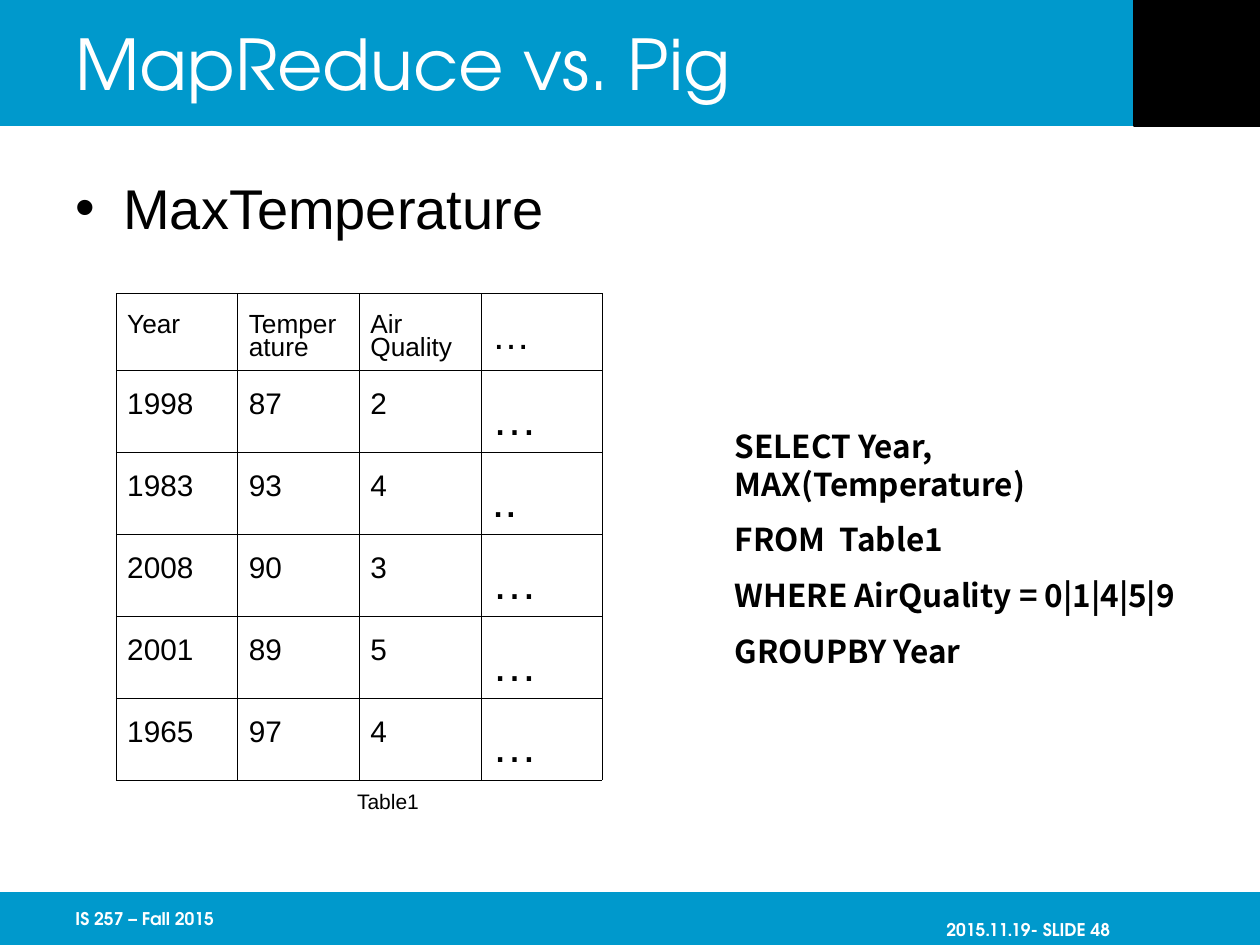
from lxml.etree import SubElement
from pptx import Presentation
from pptx.dml.color import RGBColor
from pptx.enum.shapes import MSO_SHAPE
from pptx.enum.text import MSO_ANCHOR as Anchor, PP_ALIGN as Align
from pptx.oxml.ns import qn
from pptx.util import Inches, Pt

BLUE = RGBColor(0x00, 0x99, 0xCC)
BLACK = RGBColor(0, 0, 0)
WHITE = RGBColor(0xFF, 0xFF, 0xFF)
DISPLAY, BODY, QUERY = "TeX Gyre Adventor", "Arial", "Noto Sans CJK SC"

TITLE = "MapReduce vs. Pig"
TOPIC = "MaxTemperature"
READINGS = [
    ("Year", "Temperature", "Air Quality", "…"),
    ("1998", "87", "2", "…"),
    ("1983", "93", "4", ".."),
    ("2008", "90", "3", "…"),
    ("2001", "89", "5", "…"),
    ("1965", "97", "4", "…"),
]
CAPTION = "Table1"
SQL = [
    "SELECT Year, MAX(Temperature)",
    "FROM  Table1",
    "WHERE AirQuality = 0|1|4|5|9",
    "GROUPBY Year",
]
COURSE = "IS 257 – Fall 2015"
PAGE = "2015.11.19- SLIDE 48"

WIDTH, HEIGHT = 10, 7.5
BAND, FOOTER, MARGIN = 1, 0.42, 0.5
FOOTER_TOP = HEIGHT - FOOTER
TABLE_LEFT, TABLE_TOP, TABLE_SIZE = 0.92, 2.33, 3.86
HEADER_ROW = 0.61
CELL_STYLES = {
    ("header", "value"): (15, 0.18),
    ("header", "more"): (22, 0.24),
    ("data", "value"): (17, 0.19),
    ("data", "more"): (26, 0.27),
}
INNER_LINE, OUTER_LINE = 0.06, 0.11

deck = Presentation()
deck.slide_width, deck.slide_height = Inches(WIDTH), Inches(HEIGHT)
slide = deck.slides.add_slide(deck.slide_layouts[6])


def set_insets(target, insets):
    (target.margin_left, target.margin_top,
     target.margin_right, target.margin_bottom) = map(Inches, insets)


def style(paragraph, size, face, color, bold=False):
    for run in paragraph.runs:
        font = run.font
        font.size, font.name, font.bold = Pt(size), face, bold
        font.color.rgb = color


def add_band(left, top, width, height, color):
    band = slide.shapes.add_shape(
        MSO_SHAPE.RECTANGLE, *map(Inches, (left, top, width, height)))
    band.shadow.inherit = False
    band.fill.solid()
    band.fill.fore_color.rgb = color
    band.line.fill.background()
    return band


def add_text(lines, place, size, face, color=BLACK, bold=False, align=Align.LEFT,
             anchor=Anchor.TOP, insets=(0.1, 0.05, 0.1, 0.05), gap=0):
    frame = slide.shapes.add_textbox(*map(Inches, place)).text_frame
    frame.word_wrap = True
    frame.vertical_anchor = anchor
    set_insets(frame, insets)
    frame.text = "\n".join(lines)
    for index, paragraph in enumerate(frame.paragraphs):
        paragraph.alignment = align
        if index:
            paragraph.space_before = Pt(gap)
        style(paragraph, size, face, color, bold)
    return frame


def add_border(cell, side, width):
    line = SubElement(cell._tc.get_or_add_tcPr(), qn(f"a:{side}"), w=str(int(Pt(width))))
    fill = SubElement(line, qn("a:solidFill"))
    SubElement(fill, qn("a:srgbClr"), val=str(BLACK))


def add_readings():
    rows, cols = len(READINGS), len(READINGS[0])
    table = slide.shapes.add_table(
        rows, cols, *map(Inches, (TABLE_LEFT, TABLE_TOP, TABLE_SIZE, TABLE_SIZE))).table
    table.first_row = table.horz_banding = False
    for column in table.columns:
        column.width = Inches(TABLE_SIZE / cols)
    for r, reading in enumerate(READINGS):
        table.rows[r].height = Inches(
            (TABLE_SIZE - HEADER_ROW) / (rows - 1) if r else HEADER_ROW)
        for c, value in enumerate(reading):
            size, top = CELL_STYLES["data" if r else "header",
                                    "more" if c == cols - 1 else "value"]
            cell = table.cell(r, c)
            set_insets(cell, (0.09, top, 0.09, 0.05))
            cell.text = value
            paragraph = cell.text_frame.paragraphs[0]
            paragraph.line_spacing = 0.76
            style(paragraph, size, BODY, BLACK)
            edges = {"lnL": c == 0, "lnR": c == cols - 1,
                     "lnT": r == 0, "lnB": r == rows - 1}
            for side, outer in edges.items():
                add_border(cell, side, OUTER_LINE if outer else INNER_LINE)
            cell.fill.background()


add_band(0, 0, WIDTH, BAND, BLUE)
add_band(0, FOOTER_TOP, WIDTH, FOOTER, BLUE)
add_text([PAGE], (7.42, FOOTER_TOP, 2.08, FOOTER), 10, DISPLAY, WHITE, True,
         Align.RIGHT, Anchor.MIDDLE, (0, 0.18, 0.69, 0))
corner = add_band(WIDTH - BAND, 0, BAND, BAND, BLACK)
corner.line.color.rgb = BLACK
corner.line.width = Pt(0.75)

add_text([TITLE], (MARGIN, 0, 8.5, BAND), 40, DISPLAY, WHITE, anchor=Anchor.MIDDLE)

topic = add_text([TOPIC], (MARGIN, 1.33, WIDTH - 2 * MARGIN, 5.42), 32, BODY,
                 insets=(0.1, 0.05, 0.1, 0))
bullet = topic.paragraphs[0]._p.get_or_add_pPr()
bullet.set("marL", str(Inches(0.38)))
bullet.set("indent", str(-Inches(0.38)))
SubElement(bullet, qn("a:buFont"), typeface=BODY)
SubElement(bullet, qn("a:buChar"), char="•")

add_readings()
add_text(SQL, (5.74, 3.34, 3.79, 2.04), 18, QUERY, bold=True,
         insets=(0.09, 0.05, 0.09, 0.05), gap=10.2)
add_text([CAPTION], (2.08, 6.21, 2, 0.3), 12, BODY, align=Align.CENTER)
add_text([COURSE], (MARGIN, FOOTER_TOP, 2.08, FOOTER), 10, DISPLAY, WHITE, True,
         anchor=Anchor.MIDDLE, insets=(0.1, 0.05, 0, 0.05))

deck.save("out.pptx")
